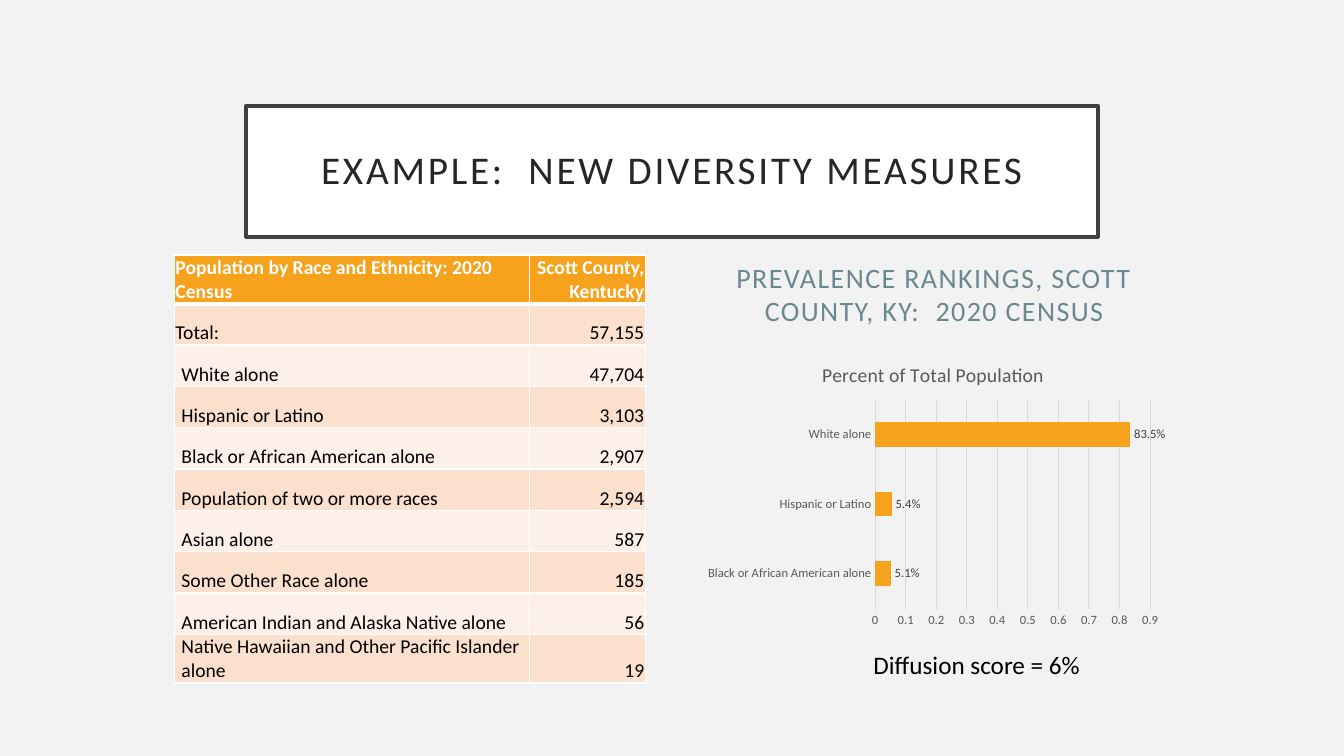
from pptx import Presentation
from pptx.chart.data import CategoryChartData
from pptx.dml.color import RGBColor
from pptx.enum.chart import XL_CHART_TYPE as ChartType, XL_LABEL_POSITION as LabelPosition
from pptx.enum.chart import XL_TICK_MARK as TickMark
from pptx.enum.text import MSO_ANCHOR as Anchor, MSO_AUTO_SIZE as AutoSize, PP_ALIGN as Align
from pptx.oxml import parse_xml
from pptx.oxml.ns import nsdecls
from pptx.util import Inches, Pt

ORANGE, GREY, PALE = "F6A21D", "595959", "D9D9D9"


def color(hex_string):
    return RGBColor.from_string(hex_string)


def style(font, size, hex_string, bold=False):
    """Set the font's face, size, colour and weight."""
    values = {"name": "Calibri", "size": Pt(size), "bold": bold}
    for name, value in values.items():
        setattr(font, name, value)
    font.color.rgb = color(hex_string)


deck = Presentation()
deck.slide_width, deck.slide_height = Inches(13.33), Inches(7.5)
page = deck.slides.add_slide(deck.slide_layouts.get_by_name("Comparison"))
page.background.fill.solid()
page.background.fill.fore_color.rgb = color("F2F2F2")

# Title, chart heading and score
title, heading = page.shapes.title, page.placeholders[1]
for holder in list(page.placeholders):
    if holder.placeholder_format.idx > 1:
        holder.element.getparent().remove(holder.element)
score = page.shapes.add_textbox(0, 0, 0, 0)

texts = [
    (title, (2.44, 1.05, 8.45, 1.3), "EXAMPLE:  NEW DIVERSITY MEASURES", 28, "262626", 2, Anchor.MIDDLE),
    (heading, (6.93, 2.53, 4.67, 0.77), "PREVALENCE RANKINGS, SCOTT COUNTY, KY:  2020 CENSUS",
     20, "6B8891", 1, Anchor.BOTTOM),
    (score, (7.07, 6.39, 5.29, 0.4), "Diffusion score = 6% ", 18, "000000", 0, Anchor.TOP),
]
for box, place, text, size, ink, spacing, anchor in texts:
    box.left, box.top, box.width, box.height = [Inches(length) for length in place]
    frame = box.text_frame
    frame.text = text
    frame.word_wrap, frame.auto_size, frame.vertical_anchor = True, AutoSize.NONE, anchor
    para = frame.paragraphs[0]
    para.alignment = Align.CENTER
    span = para.runs[0]
    style(span.font, size, ink)
    span.font._element.set("spc", str(spacing * 100))

title.fill.solid()
title.fill.fore_color.rgb = color("FFFFFF")
title.line.color.rgb = color("404040")
title.line.width = Pt(2.5)
title.text_frame.paragraphs[0].line_spacing = 0.9
for side in ("left", "top", "right", "bottom"):
    setattr(title.text_frame, f"margin_{side}", Inches(0.2))
heading.text_frame.paragraphs[0].space_before = Pt(10)

# Population table
rows = [
    ("Population by Race and Ethnicity: 2020 Census", "Scott County, Kentucky"),
    ("Total:", "57,155"),
    ("White alone", "47,704"),
    ("Hispanic or Latino", "3,103"),
    ("Black or African American alone", "2,907"),
    ("Population of two or more races", "2,594"),
    ("Asian alone", "587"),
    ("Some Other Race alone", "185"),
    ("American Indian and Alaska Native alone", "56"),
    ("Native Hawaiian and Other Pacific Islander alone", "19"),
]
table = page.shapes.add_table(
    len(rows), 2, Inches(1.73), Inches(2.53), Inches(4.67), Inches(4.08)).table
for column, width in zip(table.columns, (3.52, 1.15)):
    column.width = Inches(width)
for r, row in enumerate(rows):
    header = r == 0
    table.rows[r].height = Inches(0.39 if header else 0.41)
    for c, text in enumerate(row):
        cell = table.cell(r, c)
        cell.text = text
        indented = r > 1 and c == 0
        cell.margin_left = Inches(0.07 if indented else 0.01)
        cell.margin_top = cell.margin_right = Inches(0.01)
        cell.margin_bottom = 0
        cell.vertical_anchor = Anchor.MIDDLE if header else Anchor.BOTTOM
        para = cell.text_frame.paragraphs[0]
        para.alignment = Align.RIGHT if c else Align.LEFT
        style(para.runs[0].font, 14, "FFFFFF" if header else "000000", header)
        for side in "LRTB":
            thick = (r, side) in ((0, "B"), (1, "T"))
            cell._tc.get_or_add_tcPr().append(parse_xml(
                f'<a:ln{side} {nsdecls("a")} w="{Pt(3 if thick else 1)}">'
                f'<a:solidFill><a:srgbClr val="FFFFFF"/></a:solidFill></a:ln{side}>'))
        cell.fill.solid()
        cell.fill.fore_color.rgb = color(ORANGE if header else "FBE0CD" if r % 2 else "FDF0E8")

# Prevalence chart
data = CategoryChartData()
data.categories = ["Black or African American alone", "Hispanic or Latino", "White alone"]
data.add_series("Percent of Total Population", (0.051, 0.054, 0.835))
chart = page.shapes.add_chart(
    ChartType.BAR_CLUSTERED, Inches(6.93), Inches(3.44), Inches(4.65), Inches(2.84), data).chart
style(chart.font, 10, "000000")
chart.has_legend = False
chart.has_title = True
chart.chart_title.text_frame.text = "Percent of Total Population"
style(chart.chart_title.text_frame.paragraphs[0].runs[0].font, 14, GREY)

categories, values = chart.category_axis, chart.value_axis
for axis in (categories, values):
    axis.major_tick_mark = axis.minor_tick_mark = TickMark.NONE
    style(axis.tick_labels.font, 9, GREY)
values.minimum_scale, values.maximum_scale, values.major_unit = 0, 0.9, 0.1
values.tick_labels.number_format = "General"
values.tick_labels.number_format_is_linked = False
values.format.line.fill.background()
values.has_major_gridlines = True
for line in (categories.format.line, values.major_gridlines.format.line):
    line.color.rgb = color(PALE)
    line.width = Pt(0.75)

plot = chart.plots[0]
plot.gap_width = 182
plot.vary_by_categories = False
bars = plot.series[0]
bars.format.fill.solid()
bars.format.fill.fore_color.rgb = color(ORANGE)
labels = bars.data_labels
labels.show_value = True
labels.number_format, labels.number_format_is_linked = "0.0%", False
labels.position = LabelPosition.OUTSIDE_END
style(labels.font, 9, "404040")

deck.save("out.pptx")
